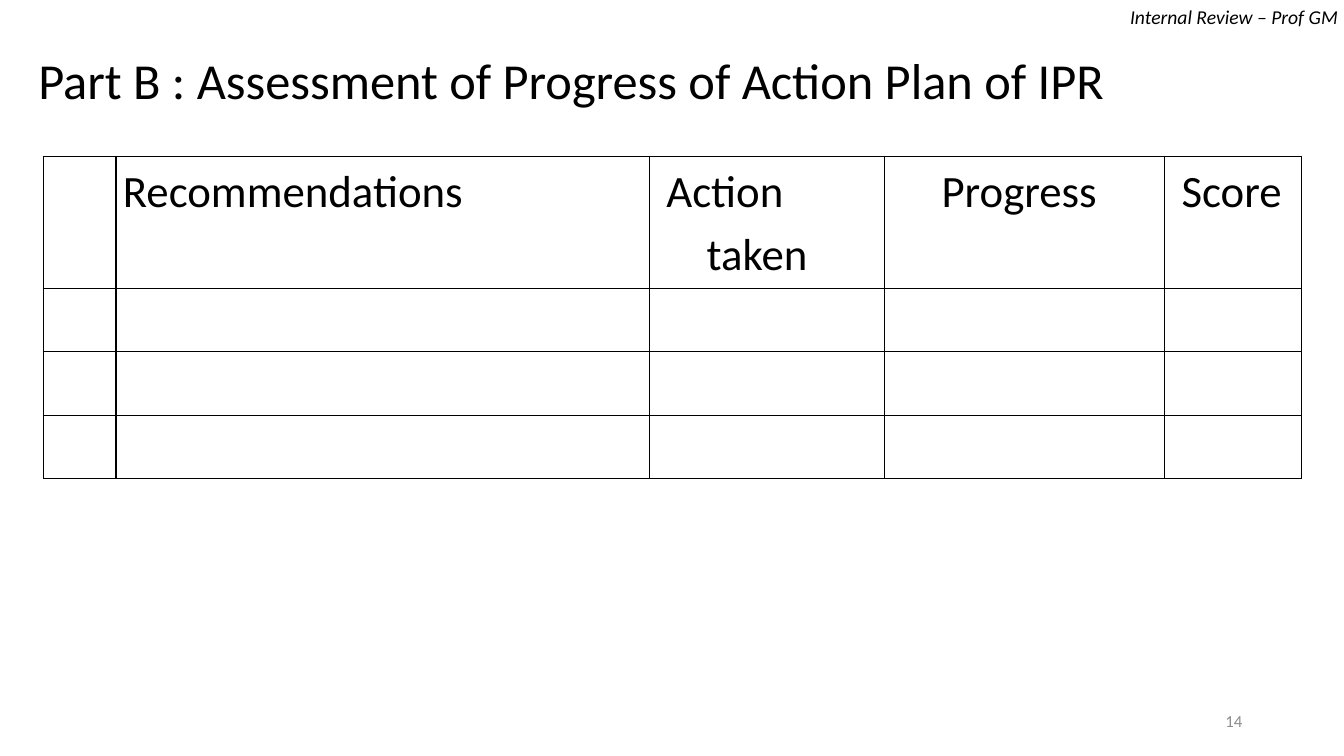
from dataclasses import dataclass

from lxml import etree
from pptx import Presentation
from pptx.dml.color import RGBColor
from pptx.enum.text import MSO_ANCHOR, MSO_AUTO_SIZE, PP_ALIGN
from pptx.oxml.ns import qn
from pptx.shapes.autoshape import Shape
from pptx.slide import Slide
from pptx.table import Table, _Cell
from pptx.text.text import _Paragraph
from pptx.util import Inches, Pt

LEFT, RIGHT, JUSTIFY = PP_ALIGN.LEFT, PP_ALIGN.RIGHT, PP_ALIGN.JUSTIFY
TOP, MIDDLE = MSO_ANCHOR.TOP, MSO_ANCHOR.MIDDLE
NO_AUTOFIT = MSO_AUTO_SIZE.NONE
BLACK = RGBColor(0, 0, 0)
GREY = RGBColor(0x8C, 0x8C, 0x8C)
FONT = "Calibri"

HEADER_HEIGHT, ENTRY_HEIGHT, ENTRY_COUNT = 1.31, 0.63, 3
HEADING_MARGIN = 0.5


@dataclass(frozen=True)
class Label:
    text: str
    left: float
    top: float
    width: float
    height: float
    size: float
    color: RGBColor = BLACK
    italic: bool = False
    align: PP_ALIGN = LEFT
    anchor: MSO_ANCHOR = TOP


@dataclass(frozen=True)
class Column:
    heading: str
    width: float
    first_indent: float = 0
    space_after: float = 0


TITLE = Label("Part B : Assessment of Progress of Action Plan of IPR",
              0.28, 0.44, 11.89, 0.71, 36)
REVIEWER = Label("Internal Review – Prof GM", 11.11, 0, 2.37, 0.34, 14, italic=True)
PAGE_NUMBER = Label("14", 9.42, 6.95, 3, 0.4, 12, GREY, align=RIGHT, anchor=MIDDLE)

COLUMNS = [
    Column("", 0.72),
    Column("Recommendations", 5.29, -0.5),
    Column("Action taken", 2.33, -0.4),
    Column("Progress", 2.78),
    Column("Score", 1.36, -0.4, 10),
]


def style_text(paragraph: _Paragraph, size: float, color: RGBColor,
               italic: bool = False) -> None:
    for run in paragraph.runs:
        run.font.name = FONT
        run.font.size = Pt(size)
        run.font.color.rgb = color
        run.font.italic = italic


def fill_label(shape: Shape, label: Label) -> None:
    shape.left, shape.top = Inches(label.left), Inches(label.top)
    shape.width, shape.height = Inches(label.width), Inches(label.height)
    frame = shape.text_frame
    frame.text = label.text
    frame.word_wrap = True
    frame.auto_size = NO_AUTOFIT
    frame.vertical_anchor = label.anchor
    frame.paragraphs[0].alignment = label.align
    style_text(frame.paragraphs[0], label.size, label.color, label.italic)


def add_label(slide: Slide, label: Label) -> None:
    fill_label(slide.shapes.add_textbox(0, 0, 0, 0), label)


def outline_cell(cell: _Cell) -> None:
    properties = cell._tc.get_or_add_tcPr()
    for side in ("lnL", "lnR", "lnT", "lnB"):
        line = etree.SubElement(properties, qn(f"a:{side}"), w=str(Pt(1)))
        fill = etree.SubElement(line, qn("a:solidFill"))
        etree.SubElement(fill, qn("a:srgbClr"), val=str(BLACK))
    cell.fill.background()


def fill_heading(cell: _Cell, column: Column) -> None:
    cell.text = column.heading
    cell.margin_left = cell.margin_right = Inches(0.07)
    cell.margin_top = cell.margin_bottom = 0
    paragraph = cell.text_frame.paragraphs[0]
    paragraph.alignment = JUSTIFY
    paragraph.line_spacing = 1.15
    paragraph.space_after = Pt(column.space_after)
    properties = paragraph._p.get_or_add_pPr()
    properties.set("marL", str(Inches(HEADING_MARGIN)))
    properties.set("indent", str(Inches(column.first_indent)))
    style_text(paragraph, 32, BLACK)


def add_progress_table(slide: Slide) -> Table:
    heights = [HEADER_HEIGHT] + [ENTRY_HEIGHT] * ENTRY_COUNT
    width = sum(column.width for column in COLUMNS)
    table = slide.shapes.add_table(
        len(heights), len(COLUMNS), Inches(0.43), Inches(1.55),
        Inches(width), Inches(sum(heights))).table
    table.first_row = table.horz_banding = False
    for row, height in zip(table.rows, heights):
        row.height = Inches(height)
    for cell in table.iter_cells():
        outline_cell(cell)
    for index, column in enumerate(COLUMNS):
        table.columns[index].width = Inches(column.width)
        if column.heading:
            fill_heading(table.cell(0, index), column)
    return table


def main() -> None:
    presentation = Presentation()
    presentation.slide_width = Inches(13.33)
    presentation.slide_height = Inches(7.5)
    slide = presentation.slides.add_slide(presentation.slide_layouts[5])
    fill_label(slide.shapes.title, TITLE)
    add_label(slide, REVIEWER)
    add_progress_table(slide)
    add_label(slide, PAGE_NUMBER)
    presentation.save("out.pptx")


if __name__ == "__main__":
    main()
